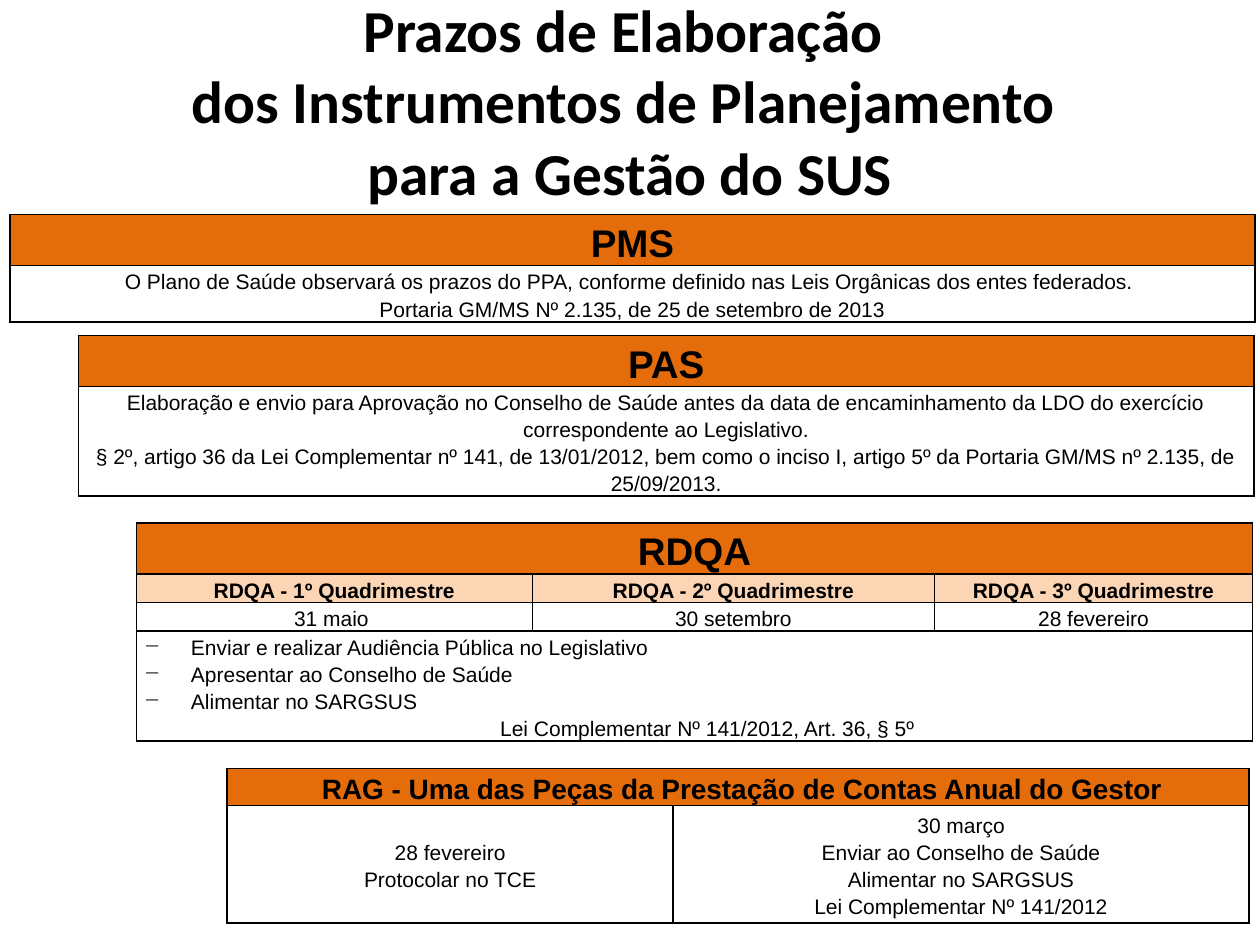
from lxml import etree
from pptx import Presentation
from pptx import util as u
from pptx.dml.color import RGBColor
from pptx.enum import text
from pptx.oxml import ns, parse_xml

NAMESPACE = ns.nsdecls("a")
HEADING, SUBHEADING, BODY = "E46C0A", "FCD5B5", None


def color(value):
    return RGBColor.from_string(value)


def format_cell(cell, content, size, bold, fill):
    cell.margin_left = cell.margin_right = u.Cm(0.15)
    cell.margin_top, cell.margin_bottom = u.Cm(0.03), 0
    cell.vertical_anchor = text.MSO_ANCHOR.MIDDLE
    if fill:
        cell.fill.solid()
        cell.fill.fore_color.rgb = color(fill)
    else:
        cell.fill.background()
    properties = cell._tc.get_or_add_tcPr()
    for position, side in enumerate("LRTB"):
        properties.insert(position, parse_xml(
            f'<a:ln{side} {NAMESPACE} w="12700"><a:solidFill>'
            f'<a:srgbClr val="000000"/></a:solidFill></a:ln{side}>'))
    for index, line in enumerate(content.split("\n")):
        frame = cell.text_frame
        paragraph = frame.add_paragraph() if index else frame.paragraphs[0]
        paragraph.alignment = text.PP_ALIGN.CENTER
        paragraph.line_spacing = 1.15
        if not line:
            continue
        run = paragraph.add_run()
        run.text = line
        run.font.name, run.font.size, run.font.bold = "Arial", u.Pt(size), bold
        run.font.color.rgb = color("000000")


presentation = Presentation()
presentation.slide_width, presentation.slide_height = u.Cm(25.4), u.Cm(19.05)
slide = presentation.slides.add_slide(presentation.slide_layouts[5])

title = slide.shapes.title
title.left, title.top, title.width, title.height = u.Cm(0.05), u.Cm(-0.08), u.Cm(25.3), u.Cm(4.2)
title.text_frame.vertical_anchor = text.MSO_ANCHOR.MIDDLE
paragraph = title.text_frame.paragraphs[0]
paragraph.alignment = text.PP_ALIGN.CENTER
title_lines = ["Prazos de Elaboração ", "dos Instrumentos de Planejamento ", "para a Gestão do SUS"]
for index, line in enumerate(title_lines):
    if index:
        paragraph.add_line_break()
    run = paragraph.add_run()
    run.text = line
    run.font.name, run.font.size, run.font.bold = "Calibri", u.Pt(34), True
    run.font.color.rgb = color("000000")
    fill = run.font._element.find(ns.qn("a:solidFill"))
    fill.addnext(parse_xml(
        f'<a:effectLst {NAMESPACE}><a:outerShdw blurRad="38100" dist="38100" dir="2700000" algn="tl">'
        '<a:srgbClr val="000000"><a:alpha val="43000"/></a:srgbClr></a:outerShdw></a:effectLst>'))

tables = [
    (0.2, 4.32, [25.1], [
        (1.03, 22, True, HEADING, ["PMS"]),
        (1.14, 12, False, BODY, [
            "O Plano de Saúde observará os prazos do PPA, conforme definido nas Leis Orgânicas dos entes federados. \n"
            "Portaria GM/MS Nº 2.135, de 25 de setembro de 2013"]),
    ]),
    (1.58, 6.76, [23.7], [
        (1.03, 22, True, HEADING, ["PAS"]),
        (2.2, 12, False, BODY, [
            "Elaboração e envio para Aprovação no Conselho de Saúde antes da data de encaminhamento da LDO "
            "do exercício correspondente ao Legislativo.\n"
            "§ 2º, artigo 36 da Lei Complementar nº 141, de 13/01/2012, bem como o inciso I, artigo 5º "
            "da Portaria GM/MS nº 2.135, de 25/09/2013."]),
    ]),
    (2.75, 10.54, [7.98, 8.11, 6.41], [
        (1.03, 22, True, HEADING, ["RDQA"]),
        (0.57, 12, True, SUBHEADING, [f"RDQA - {number}º Quadrimestre" for number in (1, 2, 3)]),
        (0.57, 12, False, BODY, ["31 maio ", "30 setembro", "28 fevereiro"]),
        (2.2, 12, False, BODY, [
            "Enviar e realizar Audiência Pública no Legislativo\nApresentar ao Conselho de Saúde\n"
            "Alimentar no SARGSUS\nLei Complementar Nº 141/2012, Art. 36, § 5º "]),
    ]),
    (4.58, 15.49, [8.99, 11.61], [
        (0.75, 16, True, HEADING, [" RAG - Uma das Peças da Prestação de Contas Anual do Gestor"]),
        (2.36, 12, False, BODY, [
            "28 fevereiro\nProtocolar no TCE",
            "30 março\nEnviar ao Conselho de Saúde\nAlimentar no SARGSUS\nLei Complementar Nº 141/2012"]),
    ]),
]

built_tables = []
for left, top, widths, rows in tables:
    height = sum(row[0] for row in rows)
    table = slide.shapes.add_table(
        len(rows), len(widths), u.Cm(left), u.Cm(top), u.Cm(sum(widths)), u.Cm(height)).table
    table.first_row = table.horz_banding = False
    for column, width in zip(table.columns, widths):
        column.width = u.Cm(width)
    for row_index, (row_height, size, bold, fill, contents) in enumerate(rows):
        table.rows[row_index].height = u.Cm(row_height)
        padded = contents + [""] * (len(widths) - len(contents))
        for column_index, content in enumerate(padded):
            format_cell(table.cell(row_index, column_index), content, size, bold, fill)
        if len(contents) < len(widths):
            table.cell(row_index, 0).merge(table.cell(row_index, len(widths) - 1))
    built_tables.append(table)

*tasks, legal_basis = built_tables[2].cell(3, 0).text_frame.paragraphs
for paragraph in tasks:
    paragraph.alignment = text.PP_ALIGN.JUSTIFY
    properties = paragraph._p.get_or_add_pPr()
    properties.set("marL", str(u.Cm(0.95)))
    properties.set("indent", str(u.Cm(-0.95)))
    etree.SubElement(properties, ns.qn("a:buChar")).set("char", "−")
legal_basis._p.get_or_add_pPr().set("marL", str(u.Cm(0.64)))

presentation.save("out.pptx")
